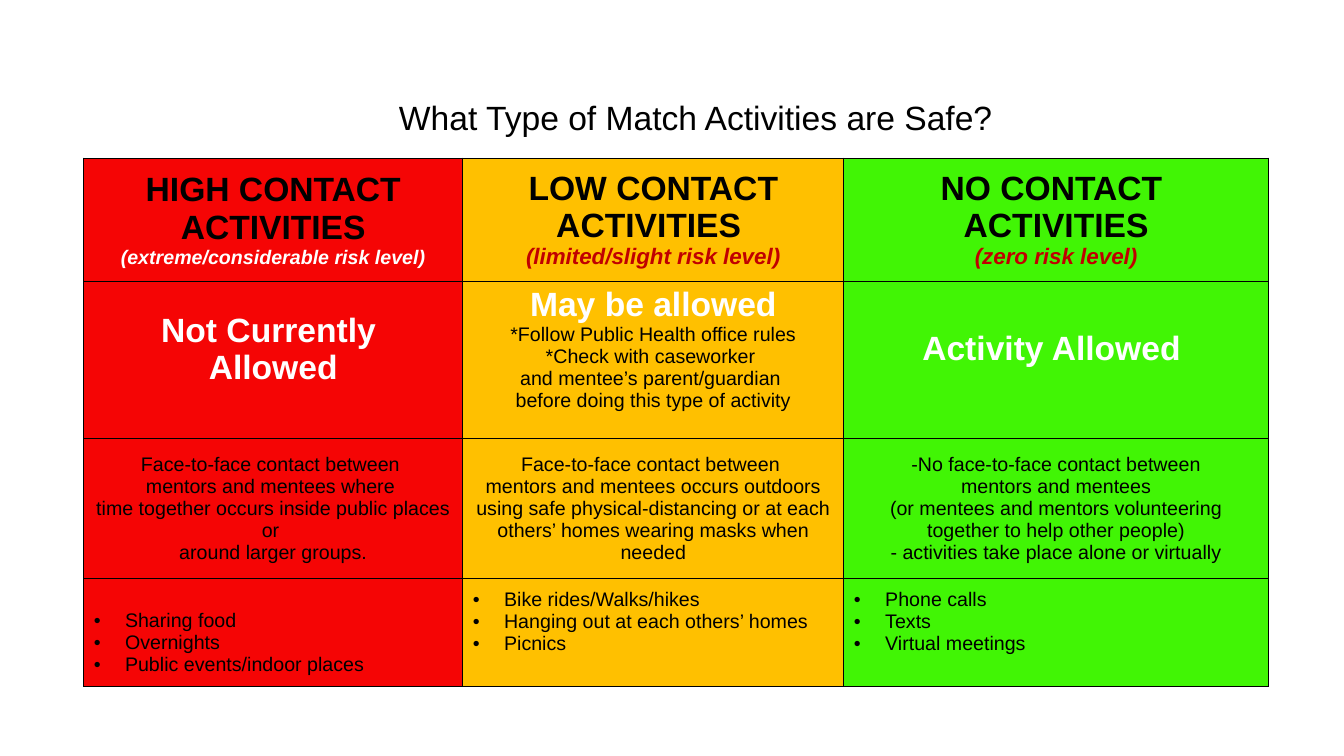
from lxml import etree
from pptx import Presentation
from pptx.dml.color import RGBColor
from pptx.enum import text
from pptx.oxml import ns
from pptx.util import Inches, Pt

FONT = "Arial"
BLACK, WHITE, DARK_RED = "000000", "FFFFFF", "C00000"
TITLE = "What Type of Match Activities are Safe?"

COLUMN_WIDTHS = [3.76, 3.78, 4.21]
COLUMN_FILLS = ["F50505", "FFC000", "41F505"]
ROW_HEIGHTS = [1.22, 1.56, 1.39, 1.07]
MARGIN, WIDE_MARGIN = 0.05, 0.26

HEADING = dict(size=24, bold=True)
STATUS = dict(size=24, bold=True, color=WHITE)
RISK = dict(size=16, bold=True, italic=True, color=DARK_RED)
EXTREME_RISK = dict(RISK, size=14, color=WHITE)
BODY = dict(size=14)
BULLET = dict(size=14, bullet=True)

# Each cell is a list of (format, lines) groups.
ROWS = [
    [
        [(HEADING, ["HIGH CONTACT ACTIVITIES"]),
         (EXTREME_RISK, ["(extreme/considerable risk level)"])],
        [(HEADING, ["LOW CONTACT ACTIVITIES "]),
         (RISK, ["(limited/slight risk level)"])],
        [(HEADING, ["NO CONTACT ", "ACTIVITIES"]),
         (RISK, ["(zero risk level)"])],
    ],
    [
        [(STATUS, ["Not Currently ", "Allowed"])],
        [(STATUS, ["May be allowed"]),
         (BODY, ["*Follow Public Health office rules",
                 "*Check with caseworker ",
                 "and mentee’s parent/guardian ",
                 "before doing this type of activity"])],
        [(STATUS, ["Activity Allowed "])],
    ],
    [
        [(BODY, ["Face-to-face contact between ",
                 "mentors and mentees where ",
                 "time together occurs inside public places or ",
                 "around larger groups."])],
        [(BODY, ["Face-to-face contact between ",
                 "mentors and mentees occurs outdoors using safe "
                 "physical-distancing or at each others’ homes "
                 "wearing masks when needed"])],
        [(BODY, ["-No face-to-face contact between",
                 " mentors and mentees ",
                 "(or mentees and mentors volunteering together "
                 "to help other people)",
                 "- activities take place alone or virtually"])],
    ],
    [
        [(BULLET, ["Sharing food", "Overnights",
                   "Public events/indoor places"])],
        [(BULLET, ["Bike rides/Walks/hikes",
                   "Hanging out at each others’ homes", "Picnics"])],
        [(BULLET, ["Phone calls", "Texts", "Virtual meetings"])],
    ],
]

# (top, bottom) cell margins that differ from the usual ones, by (row, column)
VERTICAL_MARGINS = {(1, column): (MARGIN, WIDE_MARGIN) for column in range(3)}
VERTICAL_MARGINS.update({
    (3, 0): (WIDE_MARGIN, MARGIN),
    (3, 1): (MARGIN, WIDE_MARGIN),
    (3, 2): (MARGIN, WIDE_MARGIN),
})


def rgb(color):
    return RGBColor.from_string(color)


def write(paragraph, words, size, color=BLACK, bold=False, italic=False, bullet=False):
    run = paragraph.add_run()
    run.text = words
    font = run.font
    font.name, font.size, font.bold, font.italic = FONT, Pt(size), bold, italic
    font.color.rgb = rgb(color)
    if bullet:
        paragraph.alignment = text.PP_ALIGN.LEFT
        properties = paragraph._p.get_or_add_pPr()
        properties.set("marL", str(Inches(0.31)))
        properties.set("indent", str(-Inches(0.31)))
        etree.SubElement(properties, ns.qn("a:buFont"), typeface=FONT)
        etree.SubElement(properties, ns.qn("a:buChar"), char="•")
    else:
        paragraph.alignment = text.PP_ALIGN.CENTER


def add_borders(cell):
    properties = cell._tc.get_or_add_tcPr()
    for position, side in enumerate(("lnL", "lnR", "lnT", "lnB")):
        line = etree.Element(ns.qn("a:" + side), w=str(Pt(1)))
        fill = etree.SubElement(line, ns.qn("a:solidFill"))
        etree.SubElement(fill, ns.qn("a:srgbClr"), val=BLACK)
        properties.insert(position, line)


def fill_cell(cell, groups, color, margins):
    cell.fill.solid()
    cell.fill.fore_color.rgb = rgb(color)
    add_borders(cell)
    cell.vertical_anchor = text.MSO_ANCHOR.MIDDLE
    cell.margin_top, cell.margin_bottom = map(Inches, margins)
    frame = cell.text_frame
    lines = [(line, style) for style, words in groups for line in words]
    for number, (line, style) in enumerate(lines):
        paragraph = frame.add_paragraph() if number else frame.paragraphs[0]
        write(paragraph, line, **style)


def add_title(slide):
    title = slide.shapes.title
    title.left, title.top = Inches(1.42), Inches(0.65)
    title.width, title.height = Inches(10.96), Inches(1.07)
    frame = title.text_frame
    frame.auto_size = text.MSO_AUTO_SIZE.NONE
    frame.vertical_anchor = text.MSO_ANCHOR.MIDDLE
    paragraph = frame.paragraphs[0]
    paragraph.line_spacing = 0.9
    write(paragraph, TITLE, size=24)


def add_activity_table(slide):
    table = slide.shapes.add_table(
        len(ROWS), len(COLUMN_WIDTHS), Inches(0.83), Inches(1.57),
        Inches(sum(COLUMN_WIDTHS)), Inches(sum(ROW_HEIGHTS))).table
    for column, width in zip(table.columns, COLUMN_WIDTHS):
        column.width = Inches(width)
    for row, height in zip(table.rows, ROW_HEIGHTS):
        row.height = Inches(height)
    for r, cells in enumerate(ROWS):
        for c, groups in enumerate(cells):
            margins = VERTICAL_MARGINS.get((r, c), (MARGIN, MARGIN))
            fill_cell(table.cell(r, c), groups, COLUMN_FILLS[c], margins)


def main():
    presentation = Presentation()
    presentation.slide_width = Inches(13.33)
    presentation.slide_height = Inches(7.5)
    slide = presentation.slides.add_slide(presentation.slide_layouts[5])
    add_title(slide)
    add_activity_table(slide)
    presentation.save("out.pptx")


if __name__ == "__main__":
    main()
